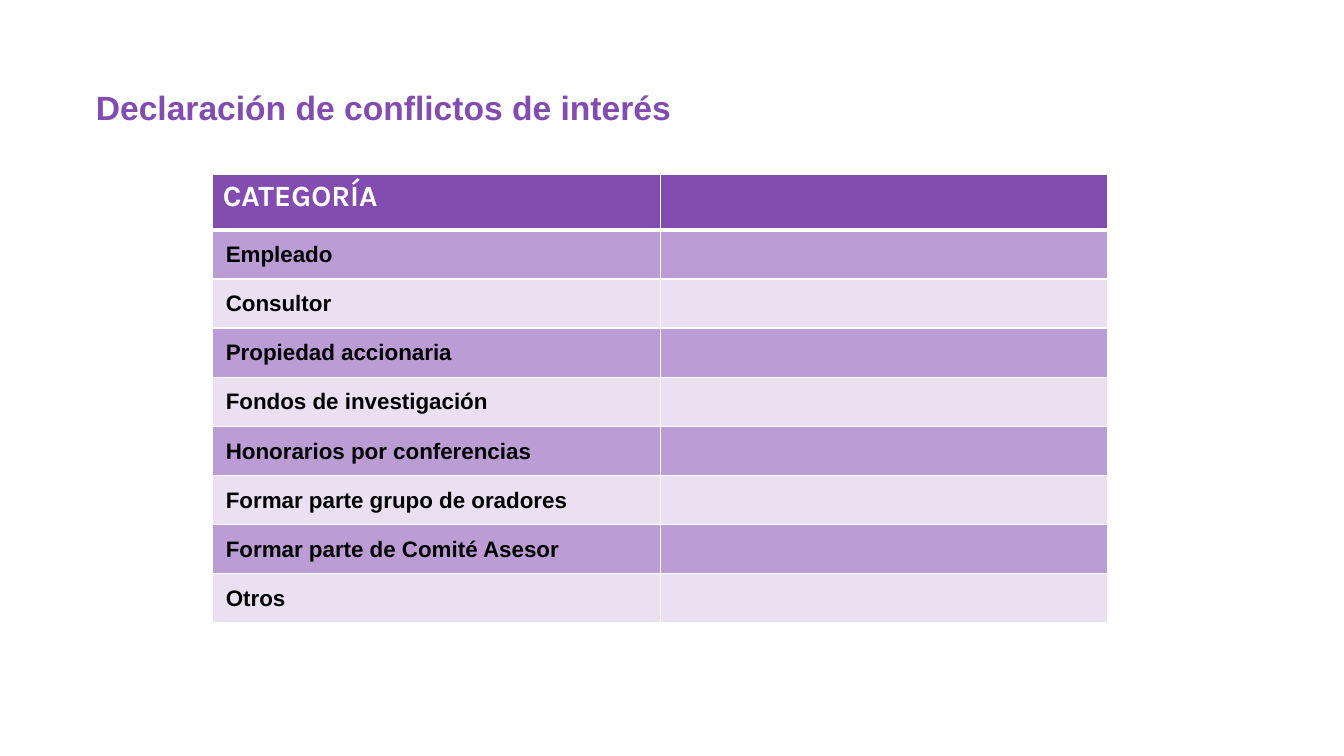
from dataclasses import dataclass

import pptx
import pptx.dml.color
import pptx.enum.text
import pptx.oxml
import pptx.oxml.ns
import pptx.util
from pptx.util import Inches


@dataclass(frozen=True)
class Theme:
    purple: str = "834CB0"
    band_dark: str = "BB9CD5"
    band_light: str = "EAE0F2"
    white: str = "FFFFFF"
    black: str = "000000"
    text_font: str = "Arial"
    header_font: str = "Karla"
    title_size: int = 24
    header_size: int = 21
    row_size: int = 16


THEME = Theme()
MIDDLE = pptx.enum.text.MSO_ANCHOR.MIDDLE
CATEGORIES = [
    "Empleado",
    "Consultor",
    "Propiedad accionaria",
    "Fondos de investigación",
    "Honorarios por conferencias",
    "Formar parte grupo de oradores",
    "Formar parte de Comité Asesor",
    "Otros",
]


def rgb(color):
    return pptx.dml.color.RGBColor.from_string(color)


def write(frame, text, *, size, color, font=THEME.text_font, bold=True):
    para = frame.paragraphs[0]
    para.alignment = pptx.enum.text.PP_ALIGN.LEFT
    span = para.add_run()
    span.text = text
    span.font.name = font
    span.font.size = pptx.util.Pt(size)
    span.font.bold = bold
    span.font.color.rgb = rgb(color)


def style_cell(cell, fill, top=1, bottom=1):
    """Give a cell white borders, with widths in points, and a solid fill."""
    properties = cell._tc.get_or_add_tcPr()
    for side, width in (("L", 1), ("R", 1), ("T", top), ("B", bottom)):
        properties.append(pptx.oxml.parse_xml(
            f'<a:ln{side} {pptx.oxml.ns.nsdecls("a")} w="{pptx.util.Pt(width)}">'
            f'<a:solidFill><a:srgbClr val="{THEME.white}"/></a:solidFill>'
            f'</a:ln{side}>'))
    cell.fill.solid()
    cell.fill.fore_color.rgb = rgb(fill)


def add_title(page, left, top, width, height):
    title = page.shapes.title
    title.left, title.top = Inches(left), Inches(top)
    title.width, title.height = Inches(width), Inches(height)
    frame = title.text_frame
    frame.word_wrap = True
    frame.auto_size = pptx.enum.text.MSO_AUTO_SIZE.NONE
    frame.vertical_anchor = MIDDLE
    write(frame, "Declaración de conflictos de interés",
          size=THEME.title_size, color=THEME.purple)


def add_category_table(page, left, top, width, height, header_height=0.55):
    table = page.shapes.add_table(
        len(CATEGORIES) + 1, 2,
        Inches(left), Inches(top), Inches(width), Inches(height)).table
    table.first_row = table.horz_banding = False
    row_height = (height - header_height) / len(CATEGORIES)

    table.rows[0].height = Inches(header_height)
    for cell in table.rows[0].cells:
        style_cell(cell, THEME.purple, bottom=3)
    write(table.cell(0, 0).text_frame, "CATEGORÍA", size=THEME.header_size,
          color=THEME.white, font=THEME.header_font)

    for index, category in enumerate(CATEGORIES, start=1):
        table.rows[index].height = Inches(row_height)
        band = THEME.band_dark if index % 2 else THEME.band_light
        for cell in table.rows[index].cells:
            style_cell(cell, band, top=3 if index == 1 else 1)
        label = table.cell(index, 0)
        label.vertical_anchor = MIDDLE
        label.margin_left = Inches(0.13)
        label.margin_top = label.margin_right = Inches(0.01)
        label.margin_bottom = 0
        write(label.text_frame, category, size=THEME.row_size, color=THEME.black)


def main():
    deck = pptx.Presentation()
    deck.slide_width, deck.slide_height = Inches(13.33), Inches(7.5)
    page = deck.slides.add_slide(deck.slide_layouts.get_by_name("Title Only"))
    page.background.fill.solid()
    page.background.fill.fore_color.rgb = rgb(THEME.white)
    add_title(page, 0.85, 0.81, 6.67, 0.5)
    add_category_table(page, 2.11, 1.73, 8.88, 4.45)
    deck.save("out.pptx")


if __name__ == "__main__":
    main()
